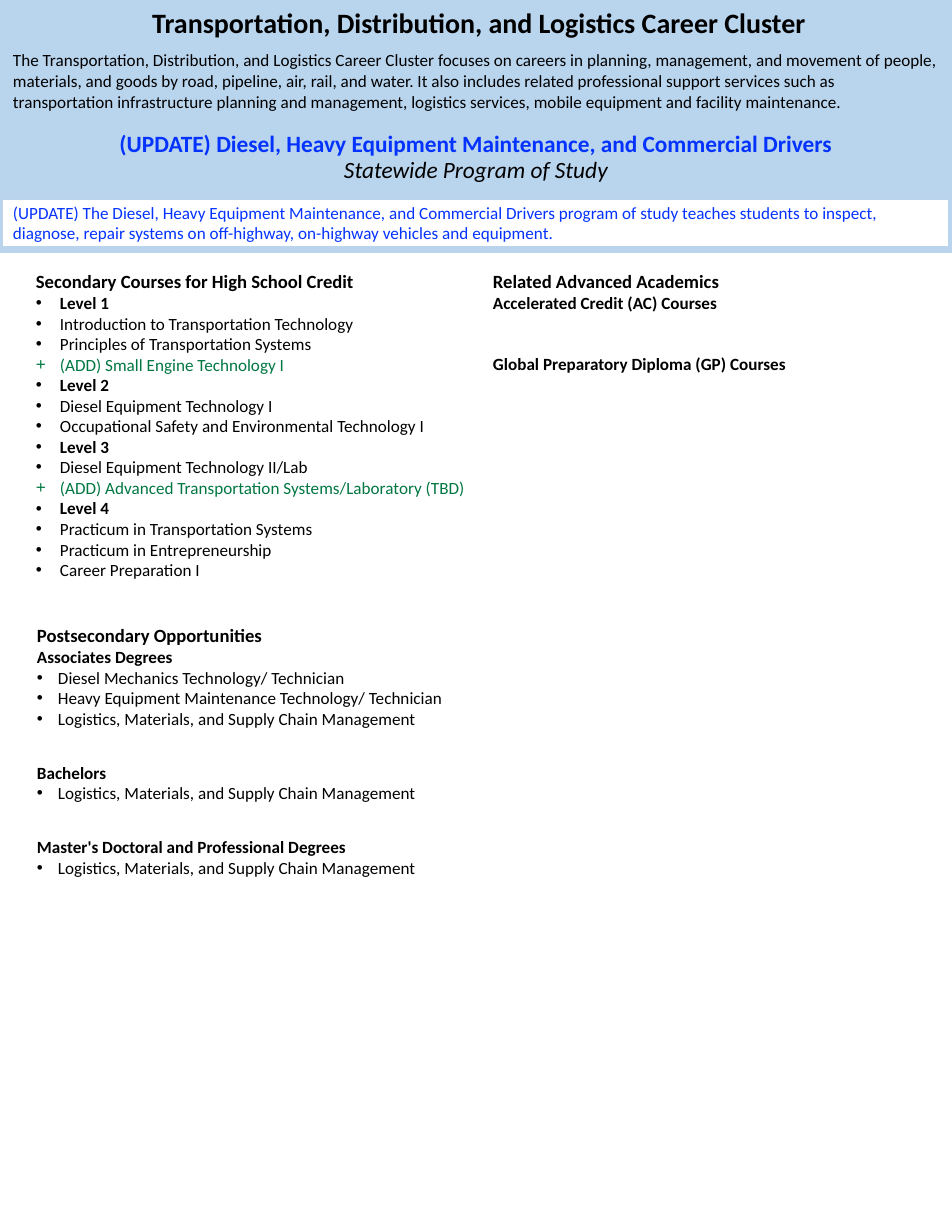
import lxml.etree
import pptx
import pptx.dml.color
import pptx.enum.shapes
import pptx.enum.text
import pptx.oxml.ns
import pptx.util

PX = 914400 / 112
COLORS = {"band": "B9D4ED", "border": "BAD4ED", "update": "0432FF",
          "add": "007742", "text": "000000"}
ALIGN = pptx.enum.text.PP_ALIGN
ANCHOR = pptx.enum.text.MSO_ANCHOR

# style: size, color, bold, italic, alignment, bullet, space before, space after
STYLES = {
    "cluster": (18, "text", True, False, ALIGN.CENTER, None, 0, 6.6),
    "intro": (11, "text", False, False, ALIGN.LEFT, None, 0, 0),
    "program": (15, "update", True, False, ALIGN.CENTER, None, 0, 0),
    "statewide": (15, "text", False, True, ALIGN.CENTER, None, 0, 0),
    "summary": (11, "update", False, False, ALIGN.LEFT, None, 0, 0),
    "heading": (12, "text", True, False, ALIGN.LEFT, None, 0, 0),
    "subheading": (11, "text", True, False, ALIGN.LEFT, None, 0, 0),
    "degree": (11, "text", True, False, ALIGN.LEFT, None, 21.5, 0),
    "academics": (11, "text", True, False, ALIGN.LEFT, None, 26, 0),
    "level": (11, "text", True, False, ALIGN.LEFT, "•", 0, 0),
    "item": (11, "text", False, False, ALIGN.LEFT, "•", 0, 0),
    "added": (11, "add", False, False, ALIGN.LEFT, "+", 0, 0),
}


def px(length):
    return pptx.util.Emu(round(length * PX))


def write_text(shape, entries, insets=(13, 6), indent=24, anchor=ANCHOR.TOP, line_spacing=1.0):
    """Fill a shape with (style, text) paragraphs; insets are side and top, in px."""
    frame = shape.text_frame
    frame.word_wrap = True
    frame.vertical_anchor = anchor
    frame.margin_left = frame.margin_right = px(insets[0])
    frame.margin_top = frame.margin_bottom = px(insets[1])
    frame.text = "\n".join(text for _, text in entries)
    for paragraph, (style, _) in zip(frame.paragraphs, entries):
        size, color, bold, italic, alignment, bullet, before, after = STYLES[style]
        paragraph.alignment = alignment
        paragraph.line_spacing = line_spacing
        paragraph.space_before = pptx.util.Pt(before)
        paragraph.space_after = pptx.util.Pt(after)
        if bullet:
            properties = paragraph._p.get_or_add_pPr()
            properties.set("marL", str(px(indent)))
            properties.set("indent", str(-px(indent)))
            font_tag = pptx.oxml.ns.qn("a:buFont")
            lxml.etree.SubElement(properties, font_tag, typeface="Arial")
            character_tag = pptx.oxml.ns.qn("a:buChar")
            lxml.etree.SubElement(properties, character_tag, char=bullet)
        for run in paragraph.runs:
            run.font.name = "Calibri"
            run.font.size = pptx.util.Pt(size)
            run.font.bold = bold
            run.font.italic = italic
            run.font.color.rgb = pptx.dml.color.RGBColor.from_string(COLORS[color])


presentation = pptx.Presentation()
presentation.slide_width = px(952)
presentation.slide_height = px(1232)
slide = presentation.slides.add_slide(presentation.slide_layouts[6])

# Header bands across the page
bands = []
for top, height in ((119, 78), (0, 120), (196, 54)):
    band = slide.shapes.add_shape(
        pptx.enum.shapes.MSO_SHAPE.RECTANGLE, px(0), px(top), px(952), px(height))
    band.shadow.inherit = False
    band.fill.solid()
    band.fill.fore_color.rgb = pptx.dml.color.RGBColor.from_string(COLORS["band"])
    band.line.fill.background()
    bands.append(band)
program_band, cluster_band, summary_band = bands
summary_band.fill.background()
summary_band.line.color.rgb = pptx.dml.color.RGBColor.from_string(COLORS["border"])
summary_band.line.width = pptx.util.Pt(4.5)

write_text(program_band, [
    ("program", "(UPDATE) Diesel, Heavy Equipment Maintenance, and Commercial Drivers"),
    ("statewide", "Statewide Program of Study"),
], anchor=ANCHOR.MIDDLE, line_spacing=0.9)
write_text(cluster_band, [
    ("cluster", " Transportation, Distribution, and Logistics Career Cluster"),
    ("intro", "The Transportation, Distribution, and Logistics Career Cluster focuses on careers in "
              "planning, management, and movement of people, materials, and goods by road, pipeline, "
              "air, rail, and water. It also includes related professional support services such as "
              "transportation infrastructure planning and management, logistics services, mobile "
              "equipment and facility maintenance."),
])
write_text(summary_band, [
    ("summary", "(UPDATE) The Diesel, Heavy Equipment Maintenance, and Commercial Drivers program of "
                "study teaches students to inspect, diagnose, repair systems on off-highway, "
                "on-highway vehicles and equipment."),
])

# Course and degree lists
courses = slide.shapes.add_textbox(px(25), px(264), px(487), px(340))
write_text(courses, [
    ("heading", "Secondary Courses for High School Credit"),
    ("level", "Level 1"),
    ("item", "Introduction to Transportation Technology"),
    ("item", "Principles of Transportation Systems"),
    ("added", "(ADD) Small Engine Technology I"),
    ("level", "Level 2"),
    ("item", "Diesel Equipment Technology I"),
    ("item", "Occupational Safety and Environmental Technology I"),
    ("level", "Level 3"),
    ("item", "Diesel Equipment Technology II/Lab"),
    ("added", "(ADD) Advanced Transportation Systems/Laboratory (TBD)"),
    ("level", "Level 4"),
    ("item", "Practicum in Transportation Systems"),
    ("item", "Practicum in Entrepreneurship"),
    ("item", "Career Preparation I"),
], insets=(11, 6))

academics = slide.shapes.add_textbox(px(482), px(264), px(446), px(170))
write_text(academics, [
    ("heading", "Related Advanced Academics"),
    ("subheading", "Accelerated Credit (AC) Courses"),
    ("academics", "Global Preparatory Diploma (GP) Courses"),
], insets=(11, 6))

postsecondary = slide.shapes.add_textbox(px(25), px(618), px(446), px(252))
write_text(postsecondary, [
    ("heading", "Postsecondary Opportunities"),
    ("subheading", "Associates Degrees"),
    ("item", "Diesel Mechanics Technology/ Technician"),
    ("item", "Heavy Equipment Maintenance Technology/ Technician"),
    ("item", "Logistics, Materials, and Supply Chain Management"),
    ("degree", "Bachelors"),
    ("item", "Logistics, Materials, and Supply Chain Management"),
    ("degree", "Master's Doctoral and Professional Degrees"),
    ("item", "Logistics, Materials, and Supply Chain Management"),
], insets=(12, 6), indent=21)

presentation.save("out.pptx")
